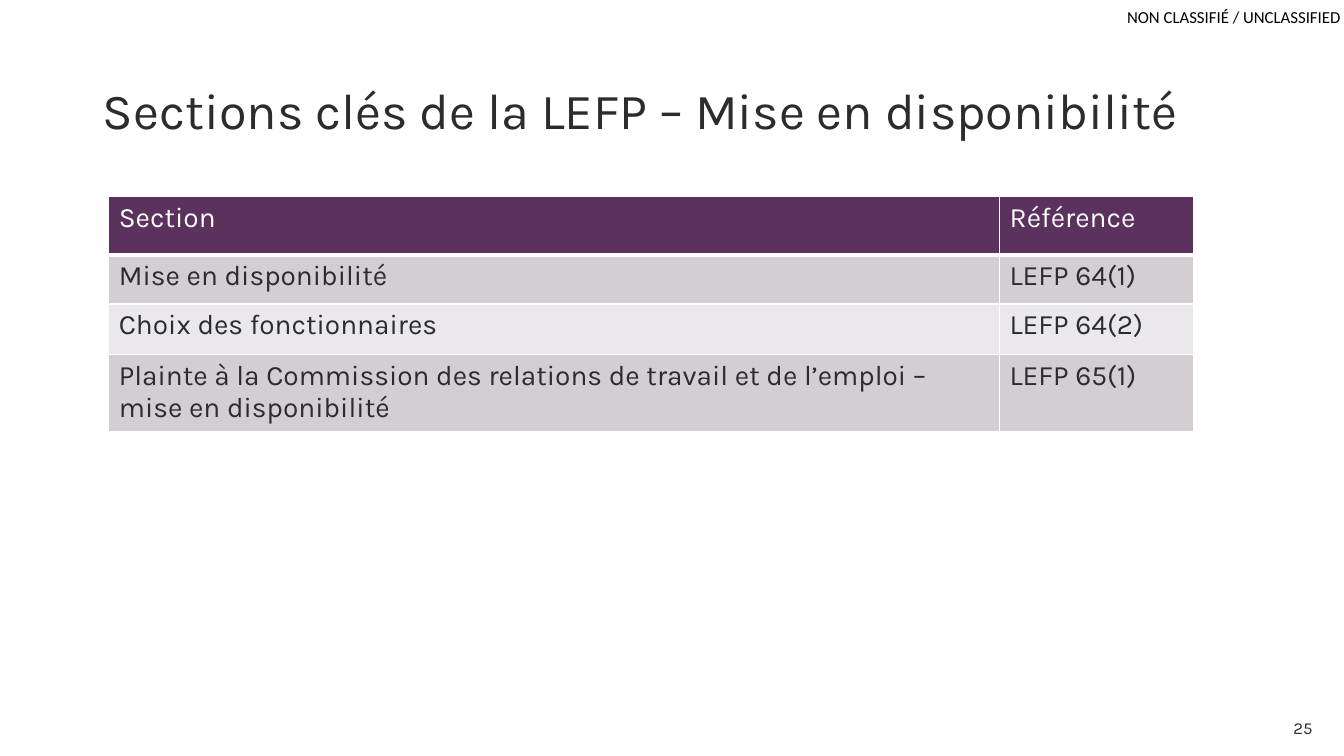
from lxml import etree
from pptx import Presentation
from pptx.dml.color import RGBColor
from pptx.enum import text as t
from pptx.oxml import ns
from pptx.util import Cm, Pt

BLACK = RGBColor(0x00, 0x00, 0x00)
WHITE = RGBColor(0xFF, 0xFF, 0xFF)
INK = RGBColor(0x2A, 0x2C, 0x2D)
PURPLE = RGBColor(0x5B, 0x31, 0x5E)
DARK_BAND = RGBColor(0xD2, 0xCE, 0xD2)
LIGHT_BAND = RGBColor(0xEA, 0xE8, 0xEA)

ROWS = [
    ("Section", "Référence"),
    ("Mise en disponibilité", "LEFP 64(1)"),
    ("Choix des fonctionnaires", "LEFP 64(2)"),
    ("Plainte à la Commission des relations de travail et de l’emploi – "
     "mise en disponibilité", "LEFP 65(1)"),
]
ROW_HEIGHTS = [1.47, 1.24, 1.27, 1.93]
REFERENCE_WIDTH = 4.88


def write(frame, words, size=20, color=INK, font="Karla",
          align=t.PP_ALIGN.LEFT, spacing=None):
    paragraph = frame.paragraphs[0]
    paragraph.alignment = align
    paragraph.line_spacing = spacing
    run = paragraph.add_run()
    run.text = words
    run.font.name = font
    run.font.size = Pt(size)
    run.font.bold = False
    run.font.color.rgb = color


def add_title(slide, left, top, width, height):
    title = slide.shapes.title
    title.left, title.top = Cm(left), Cm(top)
    title.width, title.height = Cm(width), Cm(height)
    title.text_frame.vertical_anchor = t.MSO_ANCHOR.MIDDLE
    write(title.text_frame, "Sections clés de la LEFP – Mise en disponibilité",
          size=36, spacing=0.9)


def add_label(slide, words, left, top, width, height, margin, **style):
    """Add a one-line, right-aligned text box."""
    box = slide.shapes.add_textbox(Cm(left), Cm(top), Cm(width), Cm(height))
    frame = box.text_frame
    frame.word_wrap = False
    frame.vertical_anchor = t.MSO_ANCHOR.MIDDLE
    frame.margin_left = frame.margin_right = Cm(margin)
    frame.margin_top = frame.margin_bottom = Cm(0)
    write(frame, words, size=12, align=t.PP_ALIGN.RIGHT, **style)


def set_borders(cell, bottom, top):
    """Draw white cell borders; the widths are in points."""
    properties = cell._tc.get_or_add_tcPr()
    for side, width in (("L", 1), ("R", 1), ("T", top), ("B", bottom)):
        line = etree.SubElement(properties, ns.qn(f"a:ln{side}"), w=str(Pt(width)))
        fill = etree.SubElement(line, ns.qn("a:solidFill"))
        etree.SubElement(fill, ns.qn("a:srgbClr"), val=str(WHITE))


def add_sections_table(slide, left, top, width):
    frame = slide.shapes.add_table(len(ROWS), 2, Cm(left), Cm(top),
                                   Cm(width), Cm(sum(ROW_HEIGHTS)))
    table = frame.table
    table.columns[0].width = Cm(width - REFERENCE_WIDTH)
    table.columns[1].width = Cm(REFERENCE_WIDTH)
    for index, (row, height) in enumerate(zip(ROWS, ROW_HEIGHTS)):
        table.rows[index].height = Cm(height)
        is_header = index == 0
        band = PURPLE if is_header else DARK_BAND if index % 2 else LIGHT_BAND
        for column, words in enumerate(row):
            cell = table.cell(index, column)
            set_borders(cell, bottom=3 if is_header else 1, top=3 if index == 1 else 1)
            cell.fill.solid()
            cell.fill.fore_color.rgb = band
            write(cell.text_frame, words, color=WHITE if is_header else INK)


def main():
    presentation = Presentation()
    presentation.slide_width, presentation.slide_height = Cm(33.87), Cm(19.05)
    slide = presentation.slides.add_slide(presentation.slide_layouts.get_by_name("Title Only"))
    add_label(slide, "NON CLASSIFIÉ / UNCLASSIFIED", 28.3, 0.18, 5.49, 0.51,
              margin=0, font="Calibri", color=BLACK)
    add_title(slide, 2.34, 1.02, 29.21, 3.68)
    add_sections_table(slide, 2.74, 4.95, 27.33)
    add_label(slide, "25", 30, 17.83, 3.33, 1.02, margin=0.25)
    presentation.save("out.pptx")


if __name__ == "__main__":
    main()
